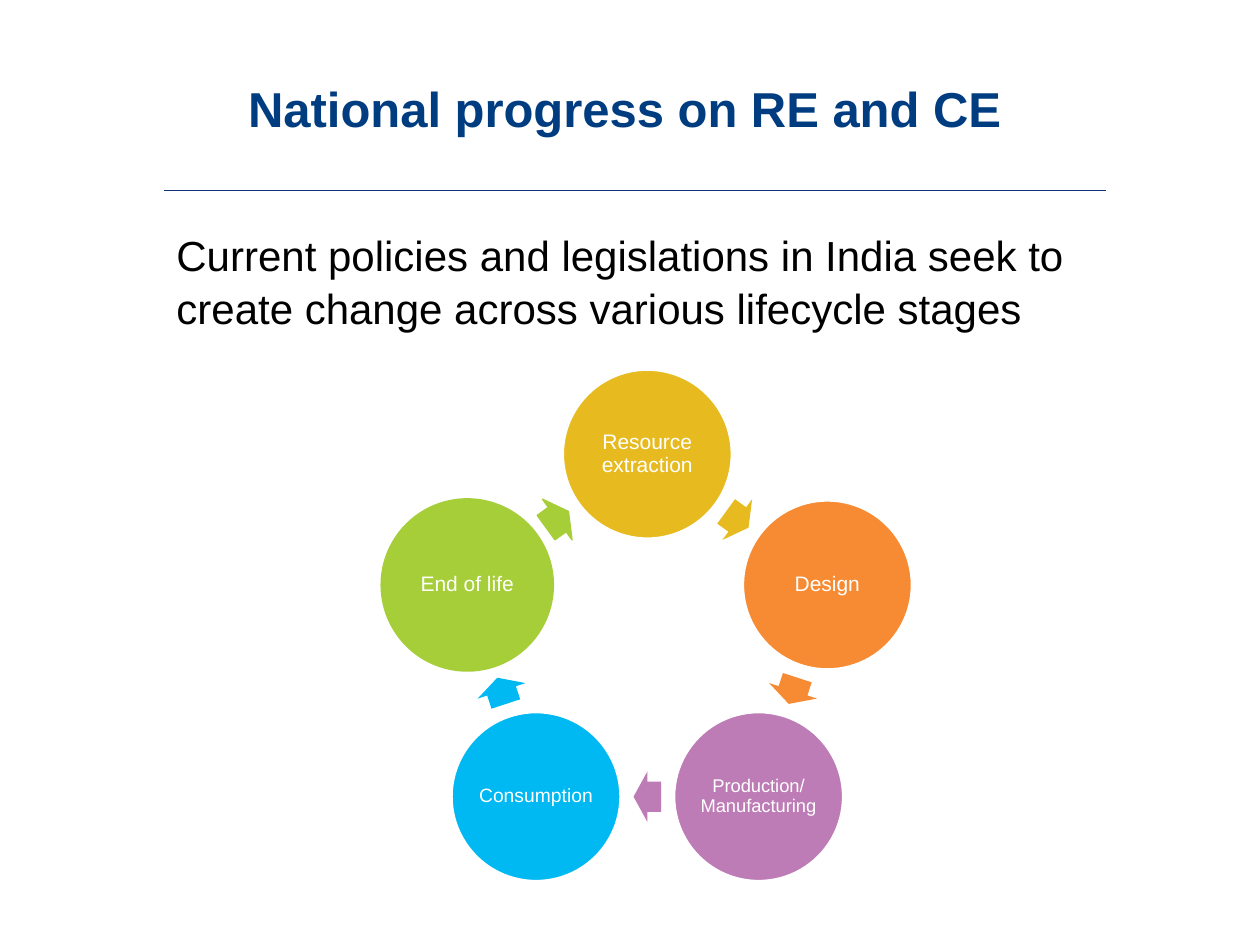
from dataclasses import dataclass
from math import cos, radians, sin

from lxml.etree import SubElement
from pptx import Presentation
from pptx.dml.color import RGBColor
from pptx.enum.shapes import MSO_CONNECTOR, MSO_SHAPE
from pptx.enum.text import MSO_ANCHOR, PP_ALIGN
from pptx.oxml.ns import qn
from pptx.util import Pt

WHITE = RGBColor(0xFF, 0xFF, 0xFF)
BLACK = RGBColor(0, 0, 0)
NAVY = RGBColor(0x00, 0x3C, 0x80)
RULE_BLUE = RGBColor(0x13, 0x31, 0x76)
GOLD = RGBColor(0xE7, 0xBB, 0x20)
ORANGE = RGBColor(0xF6, 0x8B, 0x33)
PURPLE = RGBColor(0xBD, 0x7C, 0xB5)
CYAN = RGBColor(0x00, 0xB9, 0xF2)
GREEN = RGBColor(0xA6, 0xCE, 0x39)

FONT = "Arial"
LEFT, CONTENT_WIDTH = 93.6, 538.6
CENTER_X, CENTER_Y, RADIUS = 369.9, 367.7, 108.2
DIAMETER = 97.2
ARROW_WIDTH, ARROW_HEIGHT = 15.8, 28.8


@dataclass
class Stage:
    label: str
    color: RGBColor
    size: float = 12
    outlined: bool = False  # outlined in its own colour


STAGES = [
    Stage("Resource extraction", GOLD),
    Stage("Design", ORANGE),
    Stage("Production/ Manufacturing", PURPLE, 10.5),
    Stage("Consumption", CYAN, 11),
    Stage("End of life", GREEN, outlined=True),
]
STEP = 360 / len(STAGES)


def add_text(paragraph, text: str, size: float, color: RGBColor, bold: bool = False) -> None:
    run = paragraph.add_run()
    run.text = text
    run.font.name = FONT
    run.font.size = Pt(size)
    run.font.bold = bold
    run.font.color.rgb = color


def place(shape, left: float, top: float, width: float, height: float) -> None:
    shape.left, shape.top = Pt(left), Pt(top)
    shape.width, shape.height = Pt(width), Pt(height)


def add_centered(slide, kind, x: float, y: float, width: float, height: float, color: RGBColor):
    shape = slide.shapes.add_shape(
        kind, Pt(x - width / 2), Pt(y - height / 2), Pt(width), Pt(height))
    shape.shadow.inherit = False
    shape.fill.solid()
    shape.fill.fore_color.rgb = color
    return shape


def add_stage(slide, stage: Stage, angle: float) -> None:
    x = CENTER_X + RADIUS * sin(radians(angle))
    y = CENTER_Y - RADIUS * cos(radians(angle))
    circle = add_centered(slide, MSO_SHAPE.OVAL, x, y, DIAMETER, DIAMETER, stage.color)
    circle.line.color.rgb = stage.color if stage.outlined else WHITE
    circle.line.width = Pt(2)
    frame = circle.text_frame
    frame.word_wrap = True
    frame.vertical_anchor = MSO_ANCHOR.MIDDLE
    frame.margin_left = frame.margin_right = Pt(1.2)
    frame.margin_top = frame.margin_bottom = Pt(1.2)
    paragraph = frame.paragraphs[0]
    paragraph.alignment = PP_ALIGN.CENTER
    paragraph.line_spacing = 0.9
    add_text(paragraph, stage.label, stage.size, WHITE)


def add_arrow(slide, stage: Stage, angle: float) -> None:
    # Each arrow sits midway between two neighbouring circles
    distance = RADIUS * cos(radians(STEP / 2))
    x = CENTER_X + distance * sin(radians(angle))
    y = CENTER_Y - distance * cos(radians(angle))
    arrow = add_centered(
        slide, MSO_SHAPE.RIGHT_ARROW, x, y, ARROW_WIDTH, ARROW_HEIGHT, stage.color)
    arrow.adjustments[0] = 0.6
    arrow.adjustments[1] = 0.5
    arrow.rotation = angle
    if stage.outlined:
        arrow.line.color.rgb = stage.color
        arrow.line.width = Pt(0.75)
    else:
        arrow.line.fill.background()


def main() -> None:
    presentation = Presentation()
    presentation.slide_width, presentation.slide_height = Pt(720), Pt(540)
    slide = presentation.slides.add_slide(presentation.slide_layouts[1])

    # Rule under the title
    rule = slide.shapes.add_connector(
        MSO_CONNECTOR.STRAIGHT, Pt(LEFT), Pt(108.7), Pt(LEFT + CONTENT_WIDTH), Pt(108.7))
    rule.line.color.rgb = RULE_BLUE
    rule.line.width = Pt(0.75)
    SubElement(rule._element.spPr, qn("a:effectLst"))

    # Title
    title = slide.shapes.title
    place(title, 134.6, 21.6, 497.5, 79.9)
    title.text_frame.vertical_anchor = MSO_ANCHOR.MIDDLE
    paragraph = title.text_frame.paragraphs[0]
    paragraph.alignment = PP_ALIGN.LEFT
    add_text(paragraph, "National progress on RE and CE", 28, NAVY, bold=True)

    # Introductory sentence, without a bullet
    body = slide.placeholders[1]
    place(body, LEFT, 126, CONTENT_WIDTH, 347.8)
    paragraph = body.text_frame.paragraphs[0]
    properties = paragraph._p.get_or_add_pPr()
    properties.set("marL", "0")
    properties.set("indent", "0")
    SubElement(properties, qn("a:buNone"))
    paragraph.space_before = Pt(0)
    paragraph.line_spacing = 1.05
    add_text(
        paragraph,
        "Current policies and legislations in India seek to "
        "create change across various lifecycle stages",
        24, BLACK)

    # Lifecycle ring
    for index, stage in enumerate(STAGES):
        add_stage(slide, stage, index * STEP)
        add_arrow(slide, stage, (index + 0.5) * STEP)

    presentation.save("out.pptx")


if __name__ == "__main__":
    main()
